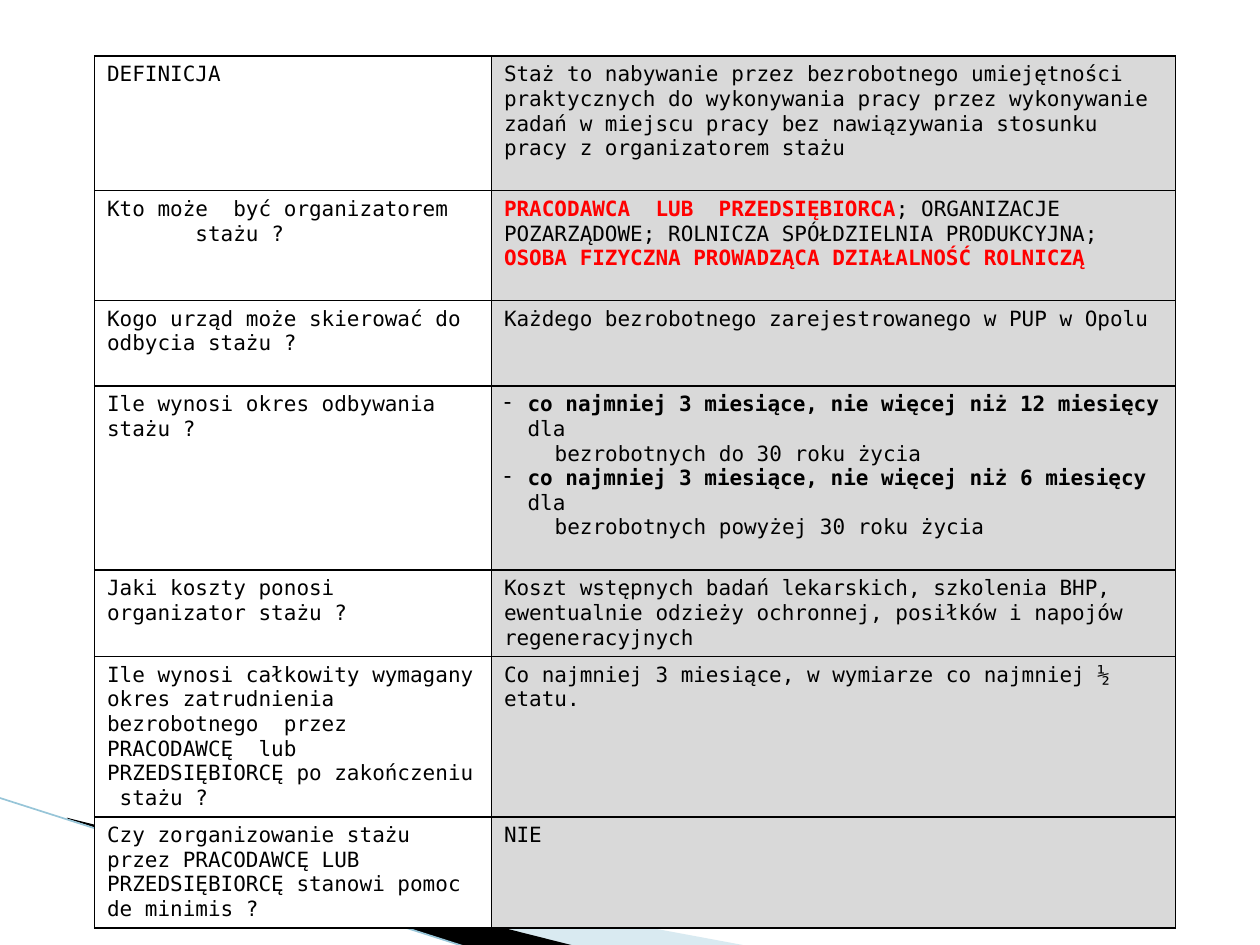
from dataclasses import dataclass

from lxml.etree import SubElement
from pptx import Presentation
from pptx.dml.color import RGBColor as RGB
from pptx.enum.shapes import MSO_CONNECTOR as CONN
from pptx.oxml.ns import qn
from pptx.util import Pt


@dataclass(frozen=True)
class Theme:
    """Colours, font and sizes of the slide."""
    font: str = "DejaVu Sans Mono"
    size: float = 12
    ink: str = "000000"
    accent: str = "FF0000"
    question: str = "FFFFFF"
    answer: str = "D9D9D9"
    wave: str = "A0CBDC"
    wave_line: str = "97C5D8"
    border: float = 1


@dataclass(frozen=True)
class Para:
    """A paragraph of (text, bold, colour) runs with its indent."""
    runs: tuple
    left: float = 0
    bullet: str = ""


def plain(text, left=0):
    """Return a paragraph of one regular run."""
    return Para(((text, False, Theme.ink),), left)


def period(length):
    """Return a dashed paragraph that stresses an internship period."""
    return Para(((length + " ", True, Theme.ink), ("dla", False, Theme.ink)), 13.5, "-")


ROWS = [
    (77, [plain("DEFINICJA")],
     [plain("Staż to nabywanie przez bezrobotnego umiejętności praktycznych do "
            "wykonywania pracy przez wykonywanie zadań w miejscu pracy bez "
            "nawiązywania stosunku pracy z organizatorem stażu")]),
    (62.6, [plain("Kto może  być organizatorem"), plain("stażu ?", 50.5)],
     [Para((("PRACODAWCA  LUB  PRZEDSIĘBIORCA", True, Theme.accent),
            ("; ORGANIZACJE POZARZĄDOWE; ROLNICZA SPÓŁDZIELNIA PRODUKCYJNA;  ",
             False, Theme.ink),
            ("OSOBA FIZYCZNA PROWADZĄCA DZIAŁALNOŚĆ ROLNICZĄ", True, Theme.accent)))]),
    (49, [plain("Kogo urząd może skierować do odbycia stażu ?")],
     [plain("Każdego bezrobotnego zarejestrowanego w PUP w Opolu")]),
    (105.2, [plain("Ile wynosi okres odbywania stażu ?")],
     [period("co najmniej 3 miesiące, nie więcej niż 12 miesięcy"),
      plain("bezrobotnych do 30 roku życia", 29),
      period("co najmniej 3 miesiące, nie więcej niż 6 miesięcy"),
      plain("bezrobotnych powyżej 30 roku życia", 29)]),
    (49.4, [plain("Jaki koszty ponosi organizator stażu ?")],
     [plain("Koszt wstępnych badań lekarskich, szkolenia BHP, ewentualnie odzieży "
            "ochronnej, posiłków i napojów regeneracyjnych")]),
    (91.4, [plain("Ile wynosi całkowity wymagany okres zatrudnienia bezrobotnego  przez "
                  "PRACODAWCĘ  lub PRZEDSIĘBIORCĘ po zakończeniu  stażu ?")],
     [plain("Co najmniej 3 miesiące, w wymiarze co najmniej ½ etatu.")]),
    (63.4, [plain("Czy zorganizowanie stażu przez PRACODAWCĘ LUB PRZEDSIĘBIORCĘ "
                  "stanowi pomoc de minimis ?")],
     [plain("NIE")]),
]


class Deck:
    """Holds the theme and the current slide."""

    def __init__(self, s, theme):
        """Keep the slide and its theme."""
        self.s = s
        self.theme = theme

    def wedge(self, points, color, alpha=100):
        """Draw a filled outline through the points."""
        first, *rest = [(Pt(x), Pt(y)) for x, y in points]
        fb = self.s.shapes.build_freeform(*first)
        fb.add_line_segments(rest, close=True)
        sp = fb.convert_to_shape()
        sp.shadow.inherit = False
        sp.fill.solid()
        sp.fill.fore_color.rgb = RGB.from_string(color)
        sp.line.fill.background()
        if alpha < 100:
            clr = sp.fill._xPr.find(".//" + qn("a:srgbClr"))
            SubElement(clr, qn("a:alpha"), val=str(alpha * 1000))

    def line(self, start, end, color, width):
        """Draw a straight line."""
        cx = self.s.shapes.add_connector(CONN.STRAIGHT, *map(Pt, start + end))
        cx.line.color.rgb = RGB.from_string(color)
        cx.line.width = Pt(width)
        SubElement(cx._element.spPr, qn("a:effectLst"))

    def table(self, left, top, widths, rows):
        """Add the question and answer table."""
        heights = [row[0] for row in rows]
        tbl = self.s.shapes.add_table(len(rows), len(widths), Pt(left), Pt(top),
                                      Pt(sum(widths)), Pt(sum(heights))).table
        tbl.first_row = tbl.horz_banding = False
        for col, width in zip(tbl.columns, widths):
            col.width = Pt(width)
        for row, (height, *texts) in zip(tbl.rows, rows):
            row.height = Pt(height)
            fills = (self.theme.question, self.theme.answer)
            for cell, paras, fill in zip(row.cells, texts, fills):
                self.cell(cell, paras, fill)

    def cell(self, cell, paras, fill):
        """Border, fill and write one cell."""
        tc_pr = cell._tc.get_or_add_tcPr()
        for side in "LRTB":
            ln = SubElement(tc_pr, qn("a:ln" + side), w=str(Pt(self.theme.border)))
            solid = SubElement(ln, qn("a:solidFill"))
            SubElement(solid, qn("a:srgbClr"), val=self.theme.ink)
        cell.fill.solid()
        cell.fill.fore_color.rgb = RGB.from_string(fill)
        tf = cell.text_frame
        for i, para in enumerate(paras):
            self.paragraph(tf.add_paragraph() if i else tf.paragraphs[0], para)

    def paragraph(self, p, para):
        """Write one paragraph run by run."""
        p_pr = p._p.get_or_add_pPr()
        if para.left:
            p_pr.set("marL", str(Pt(para.left)))
        if para.bullet:
            p_pr.set("indent", str(-Pt(para.left)))
            SubElement(p_pr, qn("a:buChar"), char=para.bullet)
        for text, bold, color in para.runs:
            r = p.add_run()
            r.text = text
            r.font.name = self.theme.font
            r.font.size = Pt(self.theme.size)
            r.font.bold = bold
            r.font.color.rgb = RGB.from_string(color)


def main():
    """Build and save the slide."""
    prs = Presentation()
    prs.slide_width, prs.slide_height = Pt(720), Pt(540)
    theme = Theme()
    deck = Deck(prs.slides.add_slide(prs.slide_layouts[6]), theme)
    deck.wedge([(39.6, 468.5), (428.4, 540.7), (328.3, 540.7), (39.6, 468)],
               theme.wave, 40)
    deck.wedge([(38.2, 467.3), (329, 540.7), (267.8, 541.4), (38.9, 468)], theme.ink)
    deck.line((-0.7, 455.8), (267.1, 541.4), theme.wave_line, 0.95)
    deck.table(54, 32, (226.8, 391), ROWS)
    prs.save("out.pptx")


if __name__ == "__main__":
    main()
